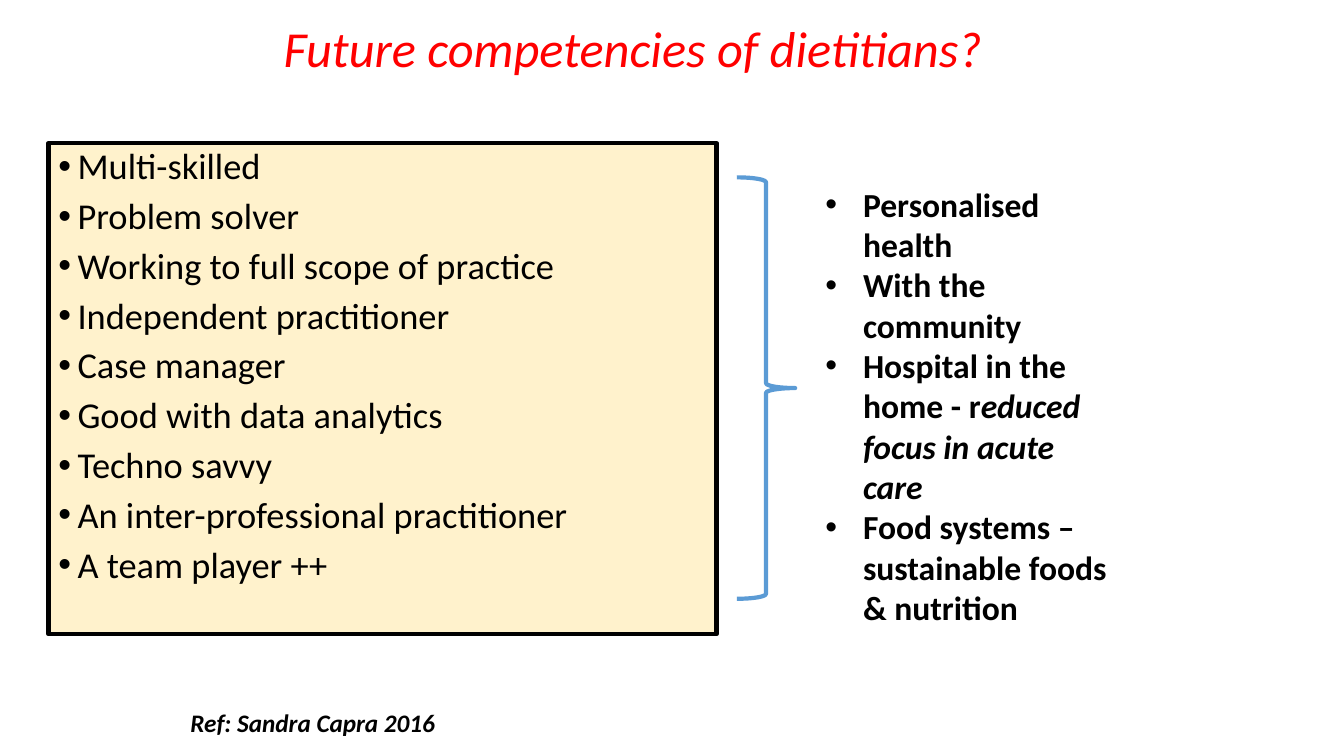
from lxml.etree import SubElement
from pptx import Presentation
from pptx.dml.color import RGBColor
from pptx.enum.shapes import MSO_SHAPE
from pptx.enum.text import MSO_ANCHOR, MSO_AUTO_SIZE, PP_ALIGN
from pptx.oxml.ns import qn
from pptx.util import Cm, Pt

# Content
TITLE = "Future competencies of dietitians?"
SKILLS = [
    "Multi-skilled",
    "Problem solver",
    "Working to full scope of practice",
    "Independent practitioner",
    "Case manager",
    "Good with data analytics",
    "Techno savvy",
    "An inter-professional practitioner",
    "A team player ++",
]
# Each outcome: upright text, italic ending
OUTCOMES = [
    ("Personalised health", ""),
    ("With the community", ""),
    ("Hospital in the home - r", "educed focus in acute care"),
    ("Food systems – sustainable foods & nutrition", ""),
]
REFERENCE = "Ref: Sandra Capra 2016"

COLORS = {
    "title": "FF0000",
    "text": "000000",
    "panel": "FFF2CC",
    "brace": "5B9BD5",
    "white": "FFFFFF",
}
FONT = "Calibri"

# Left, top, width, height in centimetres
TITLE_BOX = (4.52, 0.38, 22.86, 1.8)
SKILLS_BOX = (1.22, 3.61, 16.84, 12.37)
BRACE_BOX = (18.57, 4.47, 1.47, 10.62)
OUTCOMES_BOX = (20.55, 3.73, 7.95, 13.08)
REFERENCE_BOX = (4.55, 17.7, 10.08, 1.02)


def color(name):
    return RGBColor.from_string(COLORS[name])


def place(shape, box):
    shape.left, shape.top, shape.width, shape.height = map(Cm, box)


def style(font, size, color_name="text", bold=False, italic=False):
    font.name, font.size = FONT, Pt(size)
    font.bold, font.italic = bold, italic
    font.color.rgb = color(color_name)


def add_bullet(paragraph, indent):
    properties = paragraph._p.get_or_add_pPr()
    properties.set("marL", str(Cm(indent)))
    properties.set("indent", str(-Cm(indent)))
    SubElement(properties, qn("a:buFont")).set("typeface", "Arial")
    SubElement(properties, qn("a:buChar")).set("char", "•")


presentation = Presentation()
presentation.slide_width, presentation.slide_height = Cm(33.87), Cm(19.05)
slide = presentation.slides.add_slide(presentation.slide_layouts[1])

# Title
title = slide.shapes.title
place(title, TITLE_BOX)
frame = title.text_frame
frame.text = TITLE
frame.auto_size = MSO_AUTO_SIZE.NONE
frame.vertical_anchor = MSO_ANCHOR.MIDDLE
paragraph = frame.paragraphs[0]
paragraph.alignment = PP_ALIGN.CENTER
paragraph.line_spacing = 0.9
style(paragraph.runs[0].font, 36, "title", italic=True)

# Skills panel
skills = slide.placeholders[1]
place(skills, SKILLS_BOX)
skills.fill.solid()
skills.fill.fore_color.rgb = color("panel")
skills.line.color.rgb = color("text")
skills.line.width = Pt(3)
frame = skills.text_frame
frame.text = "\n".join(SKILLS)
frame.auto_size = MSO_AUTO_SIZE.NONE
for index, paragraph in enumerate(frame.paragraphs):
    add_bullet(paragraph, 0.48)
    paragraph.line_spacing = 0.9
    paragraph.space_before = Pt(7.5 if index else 0)
    style(paragraph.runs[0].font, 26)

# Outcomes list
outcomes = slide.shapes.add_textbox(*map(Cm, OUTCOMES_BOX))
outcomes.fill.solid()
outcomes.fill.fore_color.rgb = color("white")
frame = outcomes.text_frame
frame.word_wrap = True
frame.margin_top = Cm(0.9)
frame.text = "\n".join(upright for upright, ending in OUTCOMES)
for paragraph, (upright, ending) in zip(frame.paragraphs, OUTCOMES):
    add_bullet(paragraph, 0.95)
    style(paragraph.runs[0].font, 24, bold=True)
    if ending:
        run = paragraph.add_run()
        run.text = ending
        style(run.font, 24, bold=True, italic=True)

# Reference
reference = slide.shapes.add_textbox(*map(Cm, REFERENCE_BOX))
frame = reference.text_frame
frame.word_wrap = True
frame.text = REFERENCE
style(frame.paragraphs[0].runs[0].font, 18, bold=True, italic=True)

# Brace from skills to outcomes
brace = slide.shapes.add_shape(MSO_SHAPE.RIGHT_BRACE, *map(Cm, BRACE_BOX))
brace.shadow.inherit = False
brace.fill.background()
brace.line.color.rgb = color("brace")
brace.line.width = Pt(3)

presentation.save("out.pptx")
